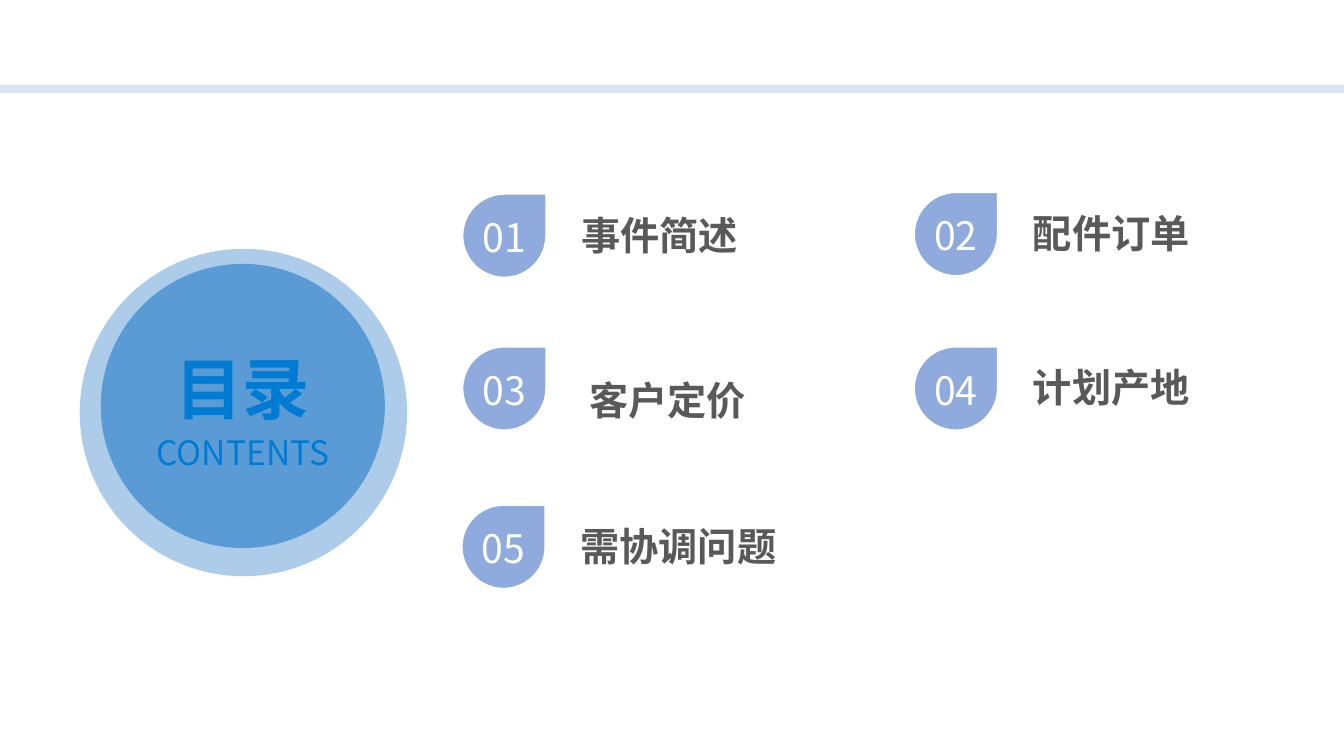
from dataclasses import dataclass

from lxml.etree import SubElement
from pptx import Presentation
from pptx.dml.color import RGBColor as RGB
from pptx.enum.shapes import MSO_CONNECTOR as CONN, MSO_SHAPE as SHAPE
from pptx.enum.text import MSO_ANCHOR as ANCHOR, MSO_AUTO_SIZE as AUTO, PP_ALIGN as ALIGN
from pptx.oxml.ns import qn
from pptx.util import Cm, Pt


@dataclass(frozen=True)
class Theme:
    font: str = "Noto Sans CJK SC"
    rule: str = "DAE3F3"
    disc: str = "5B9BD5"
    title: str = "007BD3"
    drop: str = "8FAADC"
    white: str = "FFFFFF"
    label: str = "595959"
    title_size: int = 48
    subtitle_size: int = 24
    item_size: int = 28


def write(p, text, size, color, font, bold=False, align=ALIGN.LEFT, spacing=None):
    """Add one formatted run to a paragraph, for Latin and East Asian script."""
    p.alignment = align
    p.line_spacing = spacing
    r = p.add_run()
    r.text = text
    r.font.size = Pt(size)
    r.font.bold = bold
    r.font.color.rgb = RGB.from_string(color)
    r.font.name = font
    SubElement(r.font._element, qn("a:ea"), typeface=font)


class ContentsSlide:
    def __init__(self, prs, theme):
        self.theme = theme
        self.width = prs.slide_width
        self.shapes = prs.slides.add_slide(prs.slide_layouts[6]).shapes

    def rule(self, y, weight):
        line = self.shapes.add_connector(CONN.STRAIGHT, 0, Cm(y), self.width, Cm(y))
        line.line.color.rgb = RGB.from_string(self.theme.rule)
        line.line.width = Pt(weight)
        SubElement(line._element.spPr, qn("a:effectLst"))

    def shape(self, kind, x, y, size, fill, outline=None, opacity=100):
        sp = self.shapes.add_shape(kind, Cm(x), Cm(y), Cm(size), Cm(size))
        sp.shadow.inherit = False
        sp.fill.solid()
        sp.fill.fore_color.rgb = RGB.from_string(fill)
        if opacity < 100:
            color = sp._element.spPr.find(f"{qn('a:solidFill')}/{qn('a:srgbClr')}")
            SubElement(color, qn("a:alpha"), val=str(opacity * 1000))
        if outline:
            sp.line.color.rgb = RGB.from_string(outline)
            sp.line.width = Pt(1)
        else:
            sp.line.fill.background()
        return sp

    def text(self, text, x, y, w, h, wrap=True, **fmt):
        tf = self.shapes.add_textbox(Cm(x), Cm(y), Cm(w), Cm(h)).text_frame
        tf.word_wrap = wrap
        tf.auto_size = AUTO.SHAPE_TO_FIT_TEXT
        write(tf.paragraphs[0], text, size=self.theme.item_size,
              font=self.theme.font, **fmt)

    def title_disc(self, title, subtitle):
        t = self.theme
        self.shape(SHAPE.OVAL, 2.01, 6.27, 8.25, t.disc, opacity=50)
        tf = self.shape(SHAPE.OVAL, 2.54, 6.65, 7.16, t.disc).text_frame
        tf.vertical_anchor = ANCHOR.MIDDLE
        fmt = dict(color=t.title, font=t.font, align=ALIGN.CENTER, spacing=1.1)
        write(tf.paragraphs[0], title, t.title_size, bold=True, **fmt)
        write(tf.add_paragraph(), subtitle, t.subtitle_size, **fmt)

    def item(self, number, label, x, y, dx=2.74, dy=0.31):
        """Draw a numbered drop with its label at the offset (dx, dy)."""
        t = self.theme
        self.shape(SHAPE.TEAR, x, y, 2.1, t.drop, outline=t.white)
        self.text(f"{number:02}", x + 0.16, y + 0.36, 1.78, 1.45,
                  color=t.white, align=ALIGN.CENTER)
        # One em per character plus the side insets.
        width = len(label) * t.item_size * 2.54 / 72 + 0.51
        self.text(label, x + dx, y + dy, width, 1.45, wrap=False,
                  color=t.label, bold=True)


def main():
    prs = Presentation()
    prs.slide_width, prs.slide_height = Cm(33.87), Cm(19.05)
    s = ContentsSlide(prs, Theme())
    s.rule(2.24, 6)
    s.title_disc("目录", "CONTENTS")
    left, right = 11.66, 23.04
    s.item(1, "事件简述", left, 4.89)
    s.item(2, "配件订单", right, 4.85)
    s.item(3, "客户定价", left, 8.74, dx=2.94, dy=0.61)
    s.item(4, "计划产地", right, 8.74, dy=0.28)
    s.item(5, "需协调问题", left - 0.02, 12.73)
    prs.save("out.pptx")


if __name__ == "__main__":
    main()
